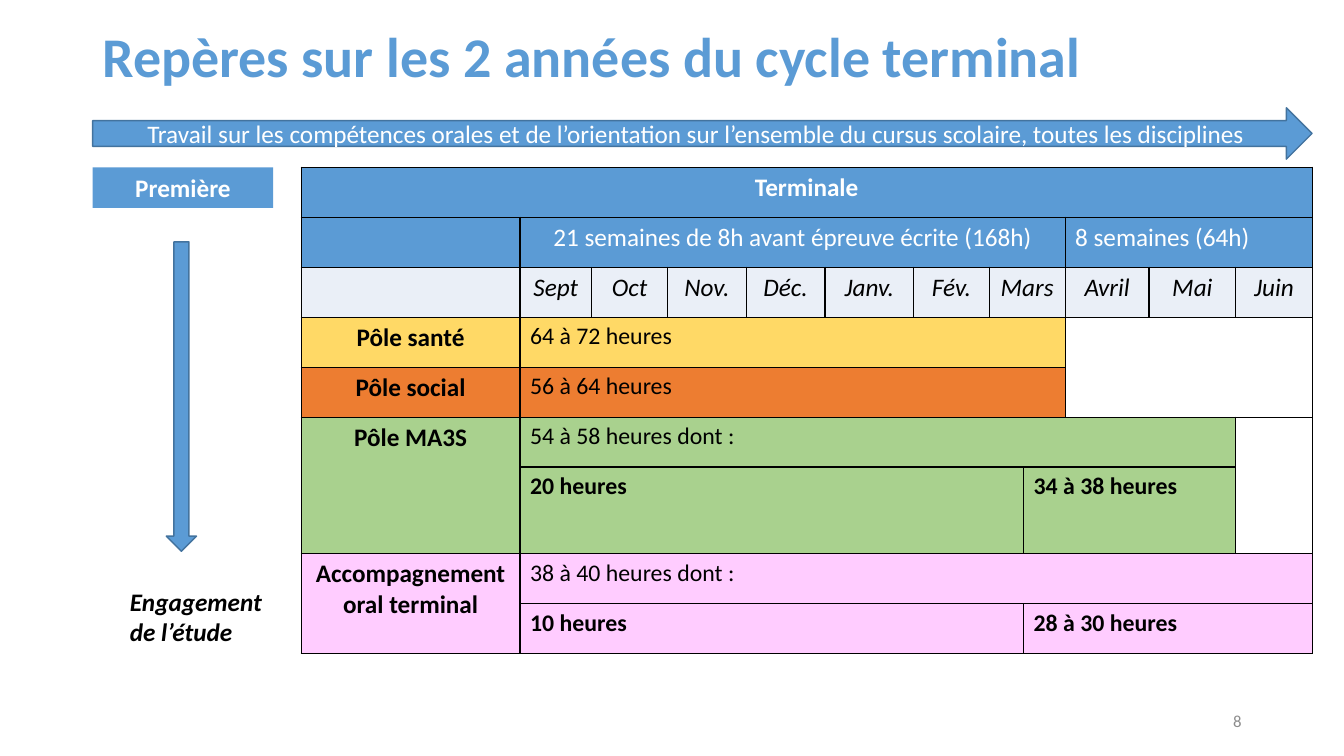
"""Build the slide on the two-year final cycle schedule."""
import pptx
import pptx.dml.color
import pptx.enum.shapes
import pptx.enum.text
import pptx.oxml
import pptx.util

Pt = pptx.util.Pt
ALIGN = pptx.enum.text.PP_ALIGN
ANCHOR = pptx.enum.text.MSO_ANCHOR
SHAPE = pptx.enum.shapes.MSO_SHAPE
COLORS = {
    "blue": "5B9BD5", "edge": "43739E", "pale": "EAEFF7", "white": "FFFFFF",
    "black": "000000", "grey": "8C8C8C", "sante": "FFD966",
    "social": "ED7D31", "ma3s": "A9D18E", "oral": "FFCCFF",
}


def rgb(name):
    return pptx.dml.color.RGBColor.from_string(COLORS[name])


class ScheduleSlide:
    def __init__(self, presentation, font="Calibri"):
        self.font = font
        self.slide = presentation.slides.add_slide(presentation.slide_layouts[5])

    def set_text(self, frame, text, size=18, color="black", bold=False,
                 italic=False, align=ALIGN.LEFT):
        frame.text = text
        paragraph = frame.paragraphs[0]
        paragraph.alignment = align
        for run in paragraph.runs:
            run.font.name = self.font
            run.font.size = Pt(size)
            run.font.bold = bold
            run.font.italic = italic
            run.font.color.rgb = rgb(color)

    def title(self, box, text):
        heading = self.slide.shapes.title
        heading.left, heading.top, heading.width, heading.height = map(Pt, box)
        frame = heading.text_frame
        self.set_text(frame, text, 40, "blue", bold=True)
        frame.auto_size = pptx.enum.text.MSO_AUTO_SIZE.NONE
        frame.vertical_anchor = ANCHOR.MIDDLE
        frame.paragraphs[0].line_spacing = 0.9

    def label(self, box, text, anchor=ANCHOR.TOP, **style):
        frame = self.slide.shapes.add_textbox(*map(Pt, box)).text_frame
        frame.word_wrap = True
        frame.vertical_anchor = anchor
        self.set_text(frame, text, **style)

    def block(self, preset, box, text="", edge=None, anchor=ANCHOR.MIDDLE, **style):
        block = self.slide.shapes.add_shape(preset, *map(Pt, box))
        block.shadow.inherit = False
        block.fill.solid()
        block.fill.fore_color.rgb = rgb("blue")
        if edge:
            block.line.color.rgb = rgb(edge)
            block.line.width = Pt(1)
        else:
            block.line.fill.background()
        if text:
            block.text_frame.vertical_anchor = anchor
            self.set_text(block.text_frame, text, color="white",
                          align=ALIGN.CENTER, **style)

    def table(self, box, widths, heights, entries):
        grid = self.slide.shapes.add_table(
            len(heights), len(widths), *map(Pt, box)).table
        for column, width in zip(grid.columns, widths):
            column.width = Pt(width)
        for row, height in zip(grid.rows, heights):
            row.height = Pt(height)
        for cell in grid.iter_cells():
            self.border(cell)
        for row, column, rows, columns, text, fill, style in entries:
            cell = grid.cell(row, column)
            if rows * columns > 1:
                cell.merge(grid.cell(row + rows - 1, column + columns - 1))
            cell.fill.solid()
            cell.fill.fore_color.rgb = rgb(fill)
            if text:
                self.set_text(cell.text_frame, text, **style)

    def border(self, cell):
        properties = cell._tc.get_or_add_tcPr()
        for side in "LRTB":
            properties.append(pptx.oxml.parse_xml(
                '<a:ln%s xmlns:a="http://schemas.openxmlformats.org/drawingml/2006/main" '
                'w="12700"><a:solidFill><a:srgbClr val="%s"/></a:solidFill></a:ln%s>'
                % (side, COLORS["black"], side)))


def schedule_entries():
    centred = {"align": ALIGN.CENTER}
    period = {"color": "white"}
    month = {"italic": True, **centred}
    pole = {"bold": True, **centred}
    hours = {"size": 17}
    split = {"size": 17, "bold": True}
    entries = [
        (0, 0, 1, 12, "Terminale", "blue", {**pole, **period}),
        (1, 0, 1, 1, "", "blue", {}),
        (1, 1, 1, 8, "21 semaines de 8h avant épreuve écrite (168h)", "blue",
         {**period, **centred}),
        (1, 9, 1, 3, "8 semaines (64h)", "blue", period),
        (2, 0, 1, 1, "", "pale", {}),
        (3, 0, 1, 1, "Pôle santé", "sante", pole),
        (3, 1, 1, 8, "64 à 72 heures", "sante", hours),
        (3, 9, 2, 3, "", "white", {}),
        (4, 0, 1, 1, "Pôle social", "social", pole),
        (4, 1, 1, 8, "56 à 64 heures", "social", hours),
        (5, 0, 2, 1, "Pôle MA3S", "ma3s", pole),
        (5, 1, 1, 10, "54 à 58 heures dont :", "ma3s", hours),
        (5, 11, 2, 1, "", "white", {}),
        (6, 1, 1, 7, "20 heures", "ma3s", split),
        (6, 8, 1, 3, "34 à 38 heures", "ma3s", split),
        (7, 0, 2, 1, "Accompagnement oral terminal", "oral", pole),
        (7, 1, 1, 11, "38 à 40 heures dont :", "oral", hours),
        (8, 1, 1, 7, "10 heures", "oral", split),
        (8, 8, 1, 4, "28 à 30 heures", "oral", split),
    ]
    months = ["Sept", "Oct", "Nov.", "Déc.", "Janv.", "Fév.", "Mars",
              "Avril", "Mai", "Juin"]
    column = 1
    for name in months:
        span = 2 if name == "Mars" else 1
        entries.append((2, column, 1, span, name, "pale", month))
        column += span
    return entries


def main():
    presentation = pptx.Presentation()
    presentation.slide_width, presentation.slide_height = Pt(960), Pt(540)
    schedule = ScheduleSlide(presentation)
    schedule.title((66, 12, 828, 60.5), "Repères sur les 2 années du cycle terminal")
    schedule.label((678, 500.5, 216, 28.8), "8", ANCHOR.MIDDLE,
                   size=12, color="grey", align=ALIGN.RIGHT)
    schedule.block(SHAPE.RECTANGLE, (66.2, 119.5, 129, 29), "Première",
                   anchor=ANCHOR.TOP, bold=True)
    schedule.block(SHAPE.DOWN_ARROW, (118.8, 172.8, 21.6, 221), edge="edge")
    schedule.label((85.7, 415.4, 116, 51), "Engagement de l’étude",
                   bold=True, italic=True)
    widths = [156.2, 51.3, 54.2, 56.2, 56.2, 63.4, 54, 24.5, 29.7, 60, 61.9, 54.6]
    heights = [35.7] * 6 + [61.9] + [35.7] * 2
    schedule.table((215.2, 119.5, sum(widths), sum(heights)), widths, heights,
                   schedule_entries())
    schedule.block(SHAPE.RIGHT_ARROW, (66.2, 77, 871, 36.7),
                   "Travail sur les compétences orales et de l’orientation sur "
                   "l’ensemble du cursus scolaire, toutes les disciplines",
                   edge="edge")
    presentation.save("out.pptx")


if __name__ == "__main__":
    main()
